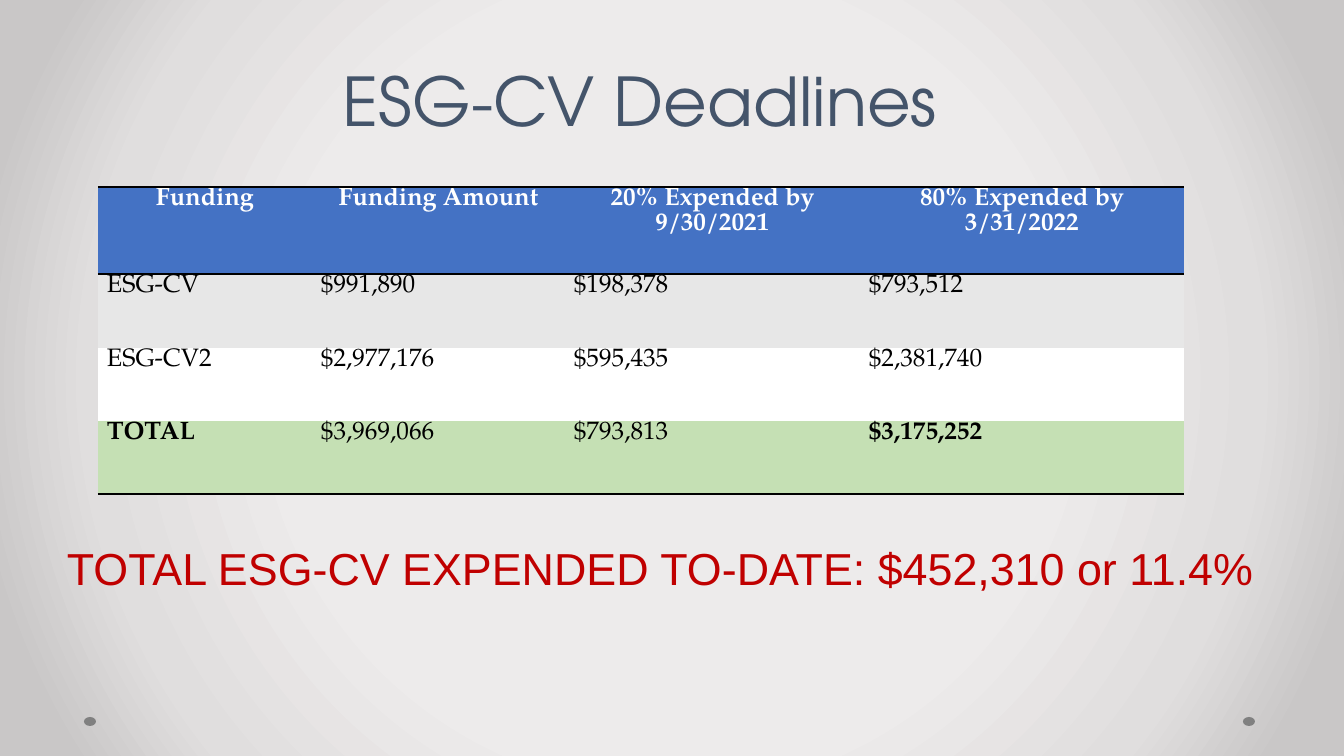
"""Build the ESG-CV deadlines slide."""
from dataclasses import dataclass

from lxml.etree import SubElement
from pptx import Presentation
from pptx.dml.color import RGBColor
from pptx.enum.shapes import MSO_SHAPE
from pptx.enum.text import MSO_ANCHOR, MSO_AUTO_SIZE, PP_ALIGN
from pptx.oxml.ns import qn
from pptx.util import Emu, Pt

TITLE = "ESG-CV Deadlines"
SUMMARY = "TOTAL ESG-CV EXPENDED TO-DATE: $452,310 or 11.4%"
FUNDING = [
    ("Funding", "Funding Amount", "20% Expended by 9/30/2021", "80% Expended by 3/31/2022"),
    ("ESG-CV", "$991,890", "$198,378", "$793,512"),
    ("ESG-CV2", "$2,977,176", "$595,435", "$2,381,740"),
    ("TOTAL", "$3,969,066", "$793,813", "$3,175,252"),
]
BOLD_TEXTS = {*FUNDING[0], "TOTAL", "$3,175,252"}
COLUMN_WIDTHS = [214, 253, 295, 324]
ROW_HEIGHTS = [87, 74, 73, 73]
ROW_BORDERS = [("lnT", "lnB"), (), (), ("lnB",)]
TABLE_ORIGIN = (98, 187)
TITLE_BOX = (35, 19, 1210, 126)
SUMMARY_BOX = (57, 536, 1217, 65)
DOTS = [(84, 717, 12, 9), (1243, 717, 12, 9)]
PLAIN_TABLE_STYLE = "{2D5ABB26-0587-4C30-8999-92F81FD0307C}"


@dataclass(frozen=True)
class Theme:
    title: tuple = ("TeX Gyre Adventor", 48, "44546A")
    header: tuple = ("TeX Gyre Pagella", 18, "FFFFFF")
    body: tuple = ("TeX Gyre Pagella", 18, "000000")
    summary: tuple = ("Arial", 32, "C00000")
    row_fills: tuple = ("4472C4", "E7E7E7", "FFFFFF", "C5E0B4")
    border: str = "000000"
    border_width: int = 2
    dot: str = "808080"
    background: tuple = ((50, "EDEBEB"), (76, "E0DEDE"), (92, "C9C7C7"))


THEME = Theme()


def px(length):
    return Emu(round(length * 914400 / 100.8))


def box(lengths):
    return [px(length) for length in lengths]


def apply(target, formats):
    for name, value in formats.items():
        setattr(target, name, value)


def write(text_frame, text, style, bold=False, **paragraph_formats):
    name, size, color = style
    paragraph = text_frame.paragraphs[0]
    apply(paragraph, paragraph_formats)
    run = paragraph.add_run()
    run.text = text
    apply(run.font, {"name": name, "size": Pt(size), "bold": bold})
    run.font.color.rgb = RGBColor.from_string(color)


def add_color(parent, color):
    SubElement(parent, qn("a:srgbClr"), val=color)


def paint_background(slide):
    slide.background.fill.gradient()
    gradient = next(slide.element.iter(qn("a:gradFill")))
    for child in list(gradient):
        gradient.remove(child)
    stops = SubElement(gradient, qn("a:gsLst"))
    for position, color in THEME.background:
        add_color(SubElement(stops, qn("a:gs"), pos=str(position * 1000)), color)
    circle = SubElement(gradient, qn("a:path"), path="circle")
    SubElement(circle, qn("a:fillToRect"), {side: "50000" for side in "ltrb"})


def add_dots(slide):
    for dot_box in DOTS:
        dot = slide.shapes.add_shape(MSO_SHAPE.OVAL, *box(dot_box))
        dot.shadow.inherit = False
        dot.fill.solid()
        dot.fill.fore_color.rgb = RGBColor.from_string(THEME.dot)
        dot.line.fill.background()


def add_title(slide):
    title = slide.shapes.title
    apply(title, dict(zip(("left", "top", "width", "height"), box(TITLE_BOX))))
    apply(title.text_frame, {"vertical_anchor": MSO_ANCHOR.BOTTOM, "word_wrap": True,
                             "auto_size": MSO_AUTO_SIZE.NONE})
    write(title.text_frame, TITLE, THEME.title,
          alignment=PP_ALIGN.CENTER, line_spacing=Pt(THEME.title[1]))


def format_cell(cell, text, row):
    properties = cell._tc.get_or_add_tcPr()
    for edge in ROW_BORDERS[row]:
        line = SubElement(properties, qn(f"a:{edge}"), w=str(Pt(THEME.border_width)))
        add_color(SubElement(line, qn("a:solidFill")), THEME.border)
    cell.fill.solid()
    cell.fill.fore_color.rgb = RGBColor.from_string(THEME.row_fills[row])
    apply(cell, {"margin_left": px(9), "margin_right": px(9),
                 "margin_top": 0, "margin_bottom": 0})
    style = THEME.body if row else THEME.header
    write(cell.text_frame, text, style, bold=text in BOLD_TEXTS,
          alignment=PP_ALIGN.LEFT if row else PP_ALIGN.CENTER,
          line_spacing=Pt(style[1]))


def add_funding_table(slide):
    size = (sum(COLUMN_WIDTHS), sum(ROW_HEIGHTS))
    table = slide.shapes.add_table(
        len(ROW_HEIGHTS), len(COLUMN_WIDTHS), *box(TABLE_ORIGIN + size)).table
    next(table._tbl.iter(qn("a:tableStyleId"))).text = PLAIN_TABLE_STYLE
    apply(table, {"first_row": True, "horz_banding": False})
    for column, width in zip(table.columns, COLUMN_WIDTHS):
        column.width = px(width)
    for row, height in enumerate(ROW_HEIGHTS):
        table.rows[row].height = px(height)
        for column, text in enumerate(FUNDING[row]):
            format_cell(table.cell(row, column), text, row)


def add_summary(slide):
    text_frame = slide.shapes.add_textbox(*box(SUMMARY_BOX)).text_frame
    apply(text_frame, {"word_wrap": False, "auto_size": MSO_AUTO_SIZE.SHAPE_TO_FIT_TEXT})
    write(text_frame, SUMMARY, THEME.summary)


def main():
    presentation = Presentation()
    apply(presentation, {"slide_width": px(1344), "slide_height": px(756)})
    slide = presentation.slides.add_slide(presentation.slide_layouts.get_by_name("Title Only"))
    paint_background(slide)
    add_dots(slide)
    add_title(slide)
    add_funding_table(slide)
    add_summary(slide)
    presentation.save("out.pptx")


if __name__ == "__main__":
    main()
